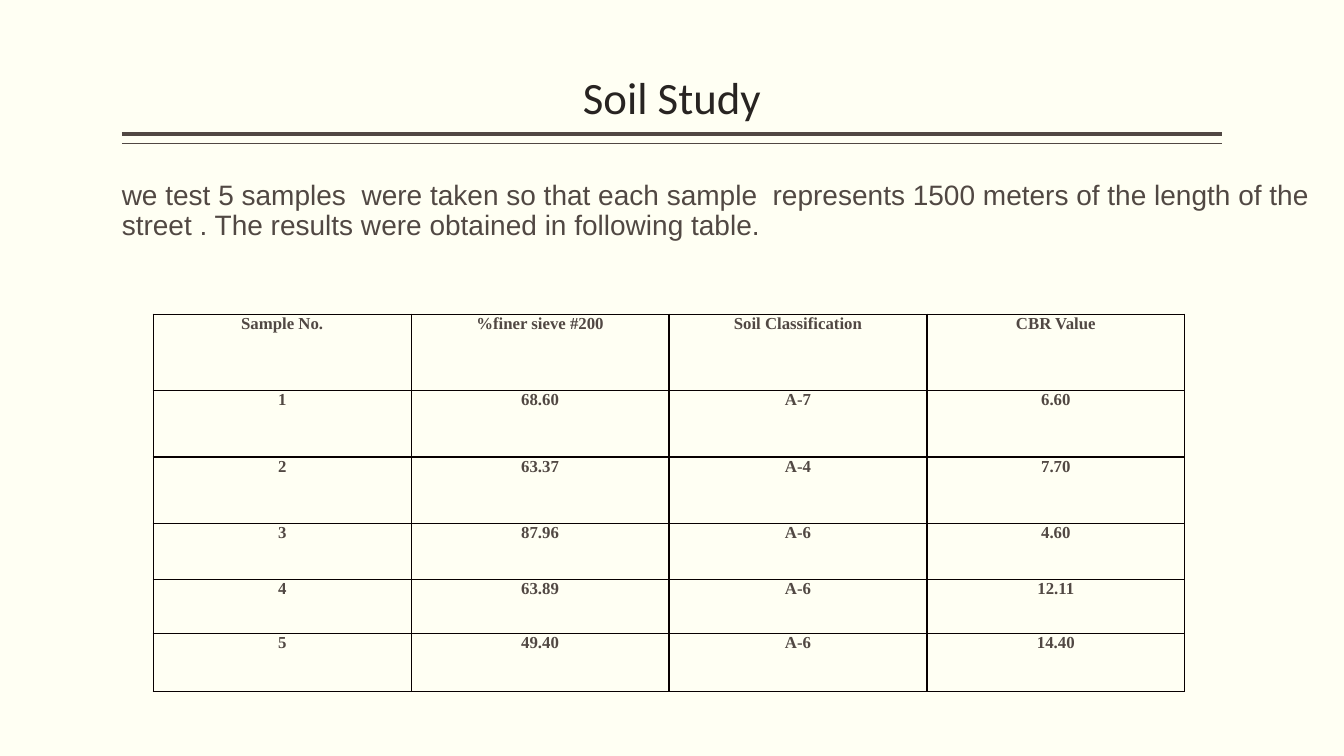
import pptx
import pptx.dml.color
import pptx.enum.shapes
import pptx.enum.text
import pptx.oxml
import pptx.oxml.ns
import pptx.util

Pt = pptx.util.Pt
ALIGN = pptx.enum.text.PP_ALIGN
ANCHOR = pptx.enum.text.MSO_ANCHOR

BACKGROUND = "FFFFF3"
TITLE_COLOR = "282422"
TEXT_COLOR = "514843"
BORDER_COLOR = "080000"

INTRODUCTION = (
    "we test 5 samples  were taken so that each sample  represents 1500 meters "
    "of the length of the street . The results were obtained in following table."
)
RESULTS = [
    ("Sample No.", "%finer sieve #200", "Soil Classification", "CBR Value"),
    ("1", "68.60", "A-7", "6.60"),
    ("2", "63.37", "A-4", "7.70"),
    ("3", "87.96", "A-6", "4.60"),
    ("4", "63.89", "A-6", "12.11"),
    ("5", "49.40", "A-6", "14.40"),
]
ROW_HEIGHTS = [54.5, 47.5, 47.5, 40, 38.5, 41.5]


def color(value):
    """Turn a hex string into a colour."""
    return pptx.dml.color.RGBColor.from_string(value)


def write(frame, text, font, size, shade, align, bold=False):
    """Put one formatted paragraph into a text frame and return it."""
    frame.text = text
    para = frame.paragraphs[0]
    para.alignment = align
    span = para.runs[0]
    span.font.name = font
    span.font.size = Pt(size)
    span.font.bold = bold
    span.font.color.rgb = color(shade)
    return para


def add_text(page, box, text, font, size, shade, align, anchor):
    """Add a wrapped text box with tight line spacing."""
    frame = page.shapes.add_textbox(*map(Pt, box)).text_frame
    frame.word_wrap = True
    frame.vertical_anchor = anchor
    frame.margin_left = frame.margin_right = 0
    frame.margin_top = frame.margin_bottom = Pt(3.6)
    write(frame, text, font, size, shade, align).line_spacing = 0.9


def add_rule(page, left, top, width, weight):
    """Draw a horizontal rule without a shadow."""
    rule = page.shapes.add_connector(
        pptx.enum.shapes.MSO_CONNECTOR.STRAIGHT,
        Pt(left), Pt(top), Pt(left + width), Pt(top),
    )
    rule.line.color.rgb = color(TEXT_COLOR)
    rule.line.width = Pt(weight)
    rule._element.spPr.append(pptx.oxml.parse_xml(
        f'<a:effectLst {pptx.oxml.ns.nsdecls("a")}/>'))


def add_heading(page, box):
    """Place the title with the double rule beneath it."""
    left, top, width, height = box
    add_text(page, box, "Soil Study", "Calibri", 32, TITLE_COLOR,
             ALIGN.CENTER, ANCHOR.BOTTOM)
    bottom = top + height
    add_rule(page, left, bottom + 3.5, width, 3)
    add_rule(page, left, bottom + 10.5, width, 1)


def add_borders(cell):
    """Outline a cell on its four sides."""
    properties = cell._tc.get_or_add_tcPr()
    for index, side in enumerate(("lnL", "lnR", "lnT", "lnB")):
        properties.insert(index, pptx.oxml.parse_xml(
            f'<a:{side} {pptx.oxml.ns.nsdecls("a")} w="{Pt(1)}"><a:solidFill>'
            f'<a:srgbClr val="{BORDER_COLOR}"/></a:solidFill></a:{side}>'))


def add_results(page, box):
    """Place the table of soil test results."""
    left, top, width, height = box
    columns = len(RESULTS[0])
    table = page.shapes.add_table(
        len(RESULTS), columns, Pt(left), Pt(top), Pt(width), Pt(height)).table
    table.first_row = table.horz_banding = False
    for column in table.columns:
        column.width = Pt(width / columns)
    for row, row_height, values in zip(table.rows, ROW_HEIGHTS, RESULTS):
        row.height = Pt(row_height)
        for cell, value in zip(row.cells, values):
            cell.margin_left = cell.margin_right = Pt(5)
            cell.margin_top = cell.margin_bottom = 0
            cell.fill.background()
            write(cell.text_frame, value, "Times New Roman", 12, TEXT_COLOR,
                  ALIGN.CENTER, bold=True)
            add_borders(cell)


def main():
    """Build the soil study slide and save it."""
    deck = pptx.Presentation()
    deck.slide_width, deck.slide_height = Pt(960), Pt(540)
    page = deck.slides.add_slide(deck.slide_layouts[6])
    page.background.fill.solid()
    page.background.fill.fore_color.rgb = color(BACKGROUND)
    add_heading(page, (87, 6, 786, 86))
    add_text(page, (87, 126, 850, 60), INTRODUCTION, "Arial", 20, TEXT_COLOR,
             ALIGN.LEFT, ANCHOR.TOP)
    add_results(page, (109.5, 224.5, 736.8, sum(ROW_HEIGHTS)))
    deck.save("out.pptx")


if __name__ == "__main__":
    main()
